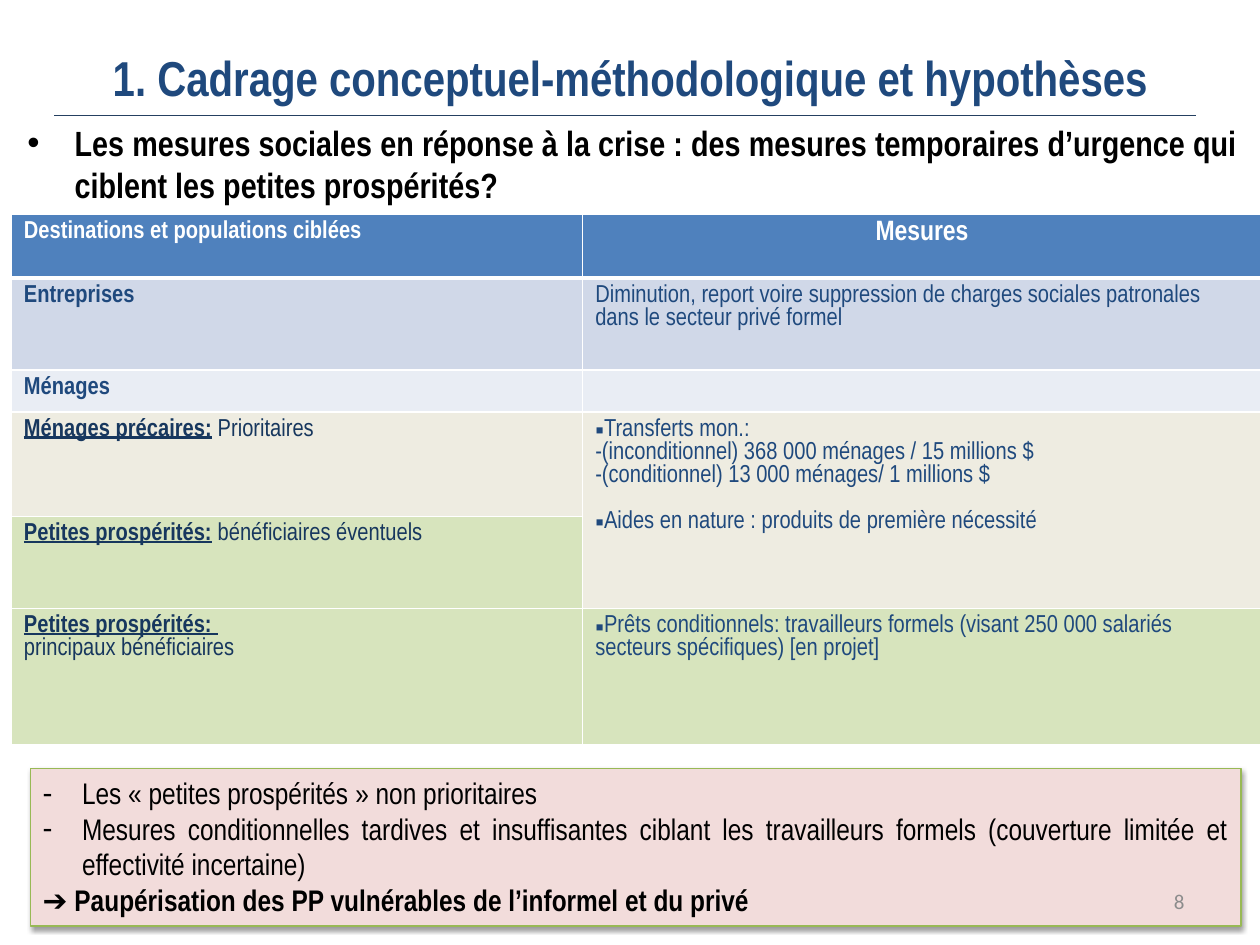
from lxml.etree import SubElement
from pptx import Presentation
from pptx.dml.color import RGBColor
from pptx.enum.shapes import MSO_CONNECTOR, MSO_SHAPE
from pptx.enum.text import MSO_ANCHOR, PP_ALIGN
from pptx.oxml import parse_xml
from pptx.oxml.ns import nsdecls, qn
from pptx.util import Pt

FONT = "Arial Narrow"
NAVY, BLUE, BLACK, WHITE = "17375E", "1F497D", "000000", "FFFFFF"
HEAD, SAND, GREEN = "4F81BD", "EEECE1", "D7E4BD"
MID, RIGHT, JUST = PP_ALIGN.CENTER, PP_ALIGN.RIGHT, PP_ALIGN.JUSTIFY


def rgb(code):
    return RGBColor.from_string(code)


def paint(fill, code):
    fill.solid()
    fill.fore_color.rgb = rgb(code)


def box(*at):
    return [Pt(v) for v in at]


def add_run(para, text, size, color, bold=False, under=False, font=FONT):
    run = para.add_run()
    run.text = text
    run.font.name, run.font.size = font, Pt(size)
    run.font.bold, run.font.underline = bold, under
    run.font.color.rgb = rgb(color)


def next_para(frame):
    """Return the unused first paragraph, or else a new one."""
    first = frame.paragraphs[0]
    return frame.add_paragraph() if first.runs else first


def set_bullet(para, char, indent=0):
    props = para._p.get_or_add_pPr()
    props.set("marL", str(Pt(indent)))
    props.set("indent", str(-Pt(indent)))
    SubElement(props, qn("a:buFont"), typeface="Arial")
    SubElement(props, qn("a:buChar"), char=char)


def add_text(slide, at):
    frame = slide.shapes.add_textbox(*box(*at)).text_frame
    frame.word_wrap = True
    return frame


def add_title(slide, text):
    title = slide.shapes.title
    title.left, title.top, title.width, title.height = box(0, 22, 720, 44)
    frame = title.text_frame
    frame.vertical_anchor = MSO_ANCHOR.MIDDLE
    para = frame.paragraphs[0]
    para.alignment = MID
    add_run(para, text, 28, BLUE, True)


def add_rule(slide):
    rule = slide.shapes.add_connector(MSO_CONNECTOR.STRAIGHT, *box(31, 66.2, 683.3, 66.2))
    rule.line.color.rgb = rgb("254061")
    rule.line.width = Pt(0.75)
    SubElement(rule._element.spPr, qn("a:effectLst"))


def add_lead(slide, text):
    para = add_text(slide, (8.6, 65.7, 705.6, 50)).paragraphs[0]
    para.alignment = JUST
    para.space_before = Pt(4)
    set_bullet(para, "•", 27)
    add_run(para, text, 20, BLACK, True)


def add_note(slide):
    note = slide.shapes.add_shape(MSO_SHAPE.RECTANGLE, *box(17.3, 439.2, 691.9, 90))
    paint(note.fill, "F2DCDB")
    note.line.color.rgb = rgb("98B955")
    note.line.width = Pt(0.75)
    note._element.spPr.append(parse_xml(
        f'<a:effectLst {nsdecls("a")}><a:outerShdw blurRad="{Pt(3.1)}" dist="{Pt(1.6)}" '
        'dir="5400000" rotWithShape="0"><a:srgbClr val="000000"><a:alpha val="38000"/>'
        '</a:srgbClr></a:outerShdw></a:effectLst>'))
    frame = note.text_frame
    frame.word_wrap = True
    frame.vertical_anchor = MSO_ANCHOR.TOP
    for text in ("Les «\u00a0petites prospérités\u00a0» non prioritaires",
                 "Mesures conditionnelles tardives et insuffisantes ciblant les travailleurs "
                 "formels (couverture limitée et effectivité incertaine)"):
        para = next_para(frame)
        para.alignment = JUST
        set_bullet(para, "-", 22.5)
        add_run(para, text, 17, BLACK)
    para = next_para(frame)
    para.alignment = JUST
    add_run(para, "➔ ", 17, BLACK)
    add_run(para, "Paupérisation des PP vulnérables de l’informel et du privé", 17, BLACK, True)


def add_number(slide, text):
    frame = add_text(slide, (516.2, 500.4, 167.8, 28.8))
    frame.vertical_anchor = MSO_ANCHOR.MIDDLE
    para = frame.paragraphs[0]
    para.alignment = RIGHT
    add_run(para, text, 12, "8C8C8C", font="Calibri")


def set_edges(cell, base):
    props = cell._tc.get_or_add_tcPr()
    for spot, side in enumerate("LRTB"):
        wide = base if side == "B" else 1
        props.insert(spot, parse_xml(
            f'<a:ln{side} {nsdecls("a")} w="{Pt(wide)}"><a:solidFill>'
            f'<a:srgbClr val="{WHITE}"/></a:solidFill></a:ln{side}>'))


def cell_para(cell, bullet=False, gap=0):
    para = next_para(cell.text_frame)
    if gap:
        para.space_before = Pt(gap)
    if bullet:
        set_bullet(para, "▪")
    return para


def add_target(cell, name, rest, split=False):
    """Write an underlined group name, then its rank, on a new line if split."""
    para = cell_para(cell)
    add_run(para, name, 14, NAVY, True, True)
    add_run(para, " ", 14, NAVY, split, split)
    if split:
        para.add_line_break()
    add_run(para, rest, 14, NAVY)


def add_grid(slide):
    heights = (36.5, 52.5, 20.9, 59.8, 52.6, 77.8)
    widths = (326.5, 387.8)
    fills = ((HEAD,) * 2, ("D0D8E8",) * 2, ("E9EDF4",) * 2,
             (SAND,) * 2, (GREEN, SAND), (GREEN,) * 2)
    grid = slide.shapes.add_table(6, 2, *box(6.5, 122.4, sum(widths), sum(heights))).table
    for col, wide in zip(grid.columns, widths):
        col.width = Pt(wide)
    for i, (row, high) in enumerate(zip(grid.rows, heights)):
        row.height = Pt(high)
        for cell, fill in zip(row.cells, fills[i]):
            paint(cell.fill, fill)
            set_edges(cell, 1 if i else 3)
    grid.cell(3, 1).merge(grid.cell(4, 1))

    for i, text, color in ((0, "Destinations et populations ciblées", WHITE),
                           (1, "Entreprises", BLUE), (2, "Ménages", BLUE)):
        add_run(cell_para(grid.cell(i, 0)), text, 14, color, True)
    para = cell_para(grid.cell(0, 1))
    para.alignment = MID
    add_run(para, "Mesures", 16, WHITE, True)
    # Small type keeps the empty cell from stretching its row
    SubElement(cell_para(grid.cell(2, 1))._p, qn("a:endParaRPr"), sz="1000")

    add_target(grid.cell(3, 0), "Ménages précaires:", "Prioritaires")
    add_target(grid.cell(4, 0), "Petites prospérités:", "bénéficiaires éventuels")
    add_target(grid.cell(5, 0), "Petites prospérités:", "principaux bénéficiaires", True)
    for i, bullet, gap, text in (
            (1, False, 0, "Diminution, report voire suppression de charges sociales "
                          "patronales dans le secteur privé formel"),
            (3, True, 0, "Transferts mon.:"),
            (3, False, 0, "-(inconditionnel) 368 000 ménages / 15 millions $"),
            (3, False, 0, "-(conditionnel) 13 000 ménages/ 1 millions $"),
            (3, True, 13, "Aides en nature : produits de première nécessité"),
            (5, True, 0, "Prêts conditionnels: travailleurs formels (visant 250 000 "
                         "salariés secteurs spécifiques) [en projet]")):
        add_run(cell_para(grid.cell(i, 1), bullet, gap), text, 14, BLUE)


def main():
    deck = Presentation()
    deck.slide_width, deck.slide_height = Pt(720), Pt(540)
    slide = deck.slides.add_slide(deck.slide_layouts[5])
    add_title(slide, "1. Cadrage conceptuel-méthodologique et hypothèses")
    add_note(slide)
    add_lead(slide, "Les mesures sociales en réponse à la crise : des mesures "
                    "temporaires d’urgence qui ciblent les petites prospérités?")
    add_rule(slide)
    add_number(slide, "8")
    add_grid(slide)
    deck.save("out.pptx")


if __name__ == "__main__":
    main()
